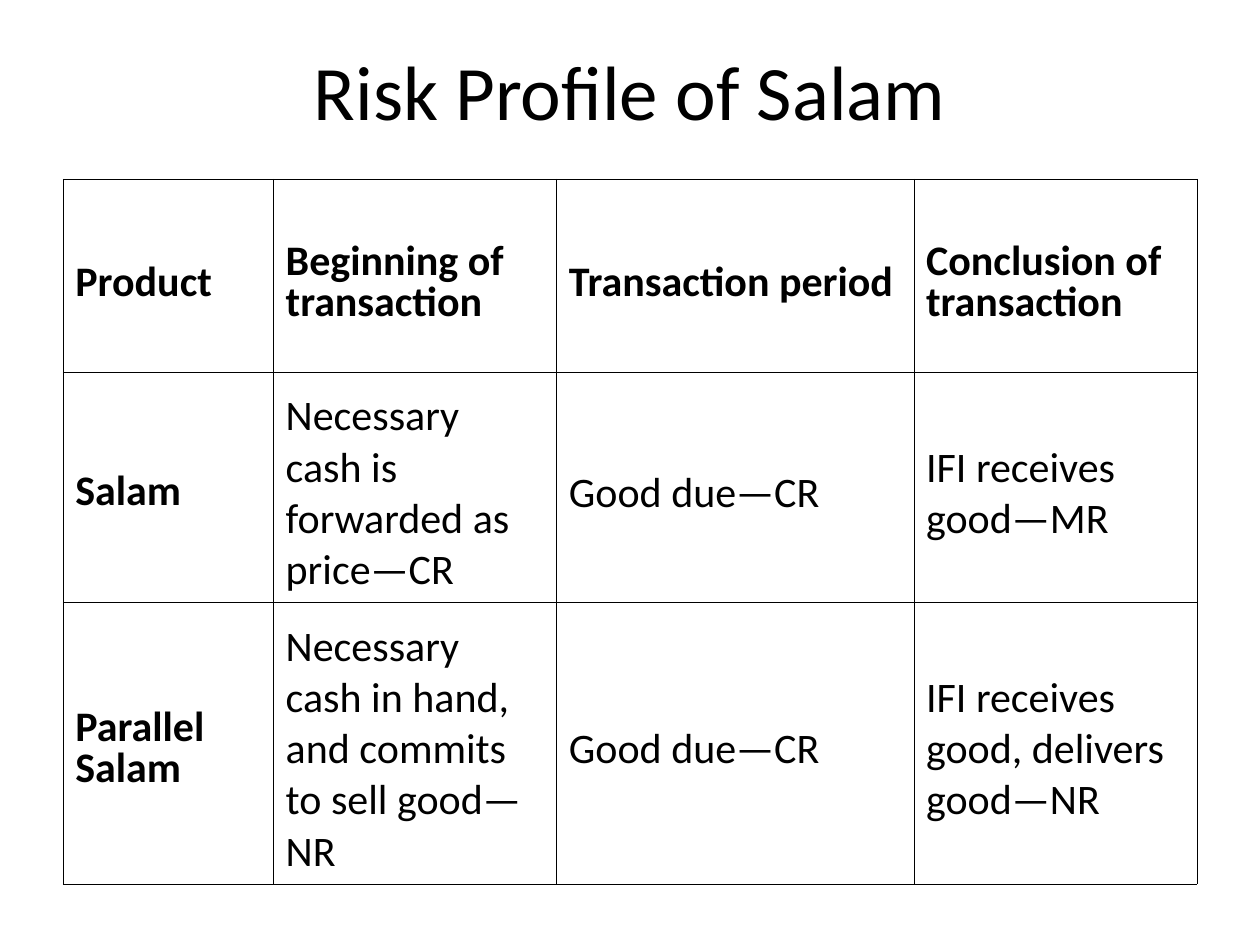
"""Build the slide on the risk profile of Salam."""
from lxml import etree
from pptx import Presentation
from pptx import util as u
from pptx.dml.color import RGBColor
from pptx.enum import text
from pptx.oxml import ns

TITLE = "Risk Profile of Salam"
ROWS = [
    ["Product", "Beginning of transaction", "Transaction period", "Conclusion of transaction"],
    ["Salam", "Necessary cash is forwarded as price—CR", "Good due—CR", "IFI receives good—MR"],
    ["Parallel Salam", "Necessary cash in hand, and commits to sell good—NR", "Good due—CR",
     "IFI receives good, delivers good—NR"],
]
COL_WIDTHS = [4.24, 5.71, 7.2, 5.71]
ROW_HEIGHTS = [3.89, 3.84, 5.05]
LEFT, WIDTH = 1.27, 22.86
INK, PAPER = "000000", "FFFFFF"
OUTER, INNER = 0.23, 0.11


def paint(fill, color):
    fill.solid()
    fill.fore_color.rgb = RGBColor.from_string(color)


def write(tf, words, size=24, bold=False, align=text.PP_ALIGN.LEFT, spacing=1.0):
    tf.word_wrap = True
    p = tf.paragraphs[0]
    p.alignment, p.line_spacing = align, spacing
    r = p.add_run()
    r.text = words
    r.font.name, r.font.size, r.font.bold = "Calibri", u.Pt(size), bold
    paint(r.font.fill, INK)


def border(cell, **widths):
    tc_pr = cell._tc.get_or_add_tcPr()
    for side, width in widths.items():
        ln = etree.SubElement(tc_pr, ns.qn(f"a:ln{side}"), w=str(u.Pt(width)))
        fill = etree.SubElement(ln, ns.qn("a:solidFill"))
        etree.SubElement(fill, ns.qn("a:srgbClr"), val=INK)


def add_title(s):
    sp = s.shapes.title
    sp.left, sp.top, sp.width, sp.height = map(u.Cm, (LEFT, 0.43, WIDTH, 2.74))
    sp.text_frame.vertical_anchor = text.MSO_ANCHOR.MIDDLE
    write(sp.text_frame, TITLE, size=44, align=text.PP_ALIGN.CENTER)


def add_risk_table(s):
    last_row, last_col = len(ROWS) - 1, len(COL_WIDTHS) - 1
    frame = s.shapes.add_table(len(ROWS), len(COL_WIDTHS), u.Cm(LEFT), u.Cm(3.61),
                               u.Cm(WIDTH), u.Cm(sum(ROW_HEIGHTS)))
    table = frame.table
    for col, width in zip(table.columns, COL_WIDTHS):
        col.width = u.Cm(width)
    for i, (row, height) in enumerate(zip(table.rows, ROW_HEIGHTS)):
        row.height = u.Cm(height)
        for j, cell in enumerate(row.cells):
            heading = i == 0 or j == 0
            cell.vertical_anchor = text.MSO_ANCHOR.MIDDLE
            cell.margin_left = cell.margin_right = u.Cm(0.25)
            cell.margin_top = u.Cm(0.46 if i == 0 else 0.38)
            cell.margin_bottom = u.Cm(0.13)
            write(cell.text_frame, ROWS[i][j], bold=heading, spacing=0.81 if heading else 1.0)
            border(cell,
                   L=OUTER if j == 0 else INNER,
                   R=OUTER if j == last_col else INNER,
                   T=OUTER if i == 0 else INNER,
                   B=OUTER if i == last_row else INNER)
            paint(cell.fill, PAPER)


def main():
    prs = Presentation()
    prs.slide_width, prs.slide_height = u.Cm(25.4), u.Cm(19.05)
    s = prs.slides.add_slide(prs.slide_layouts[5])
    add_title(s)
    add_risk_table(s)
    prs.save("out.pptx")


if __name__ == "__main__":
    main()
